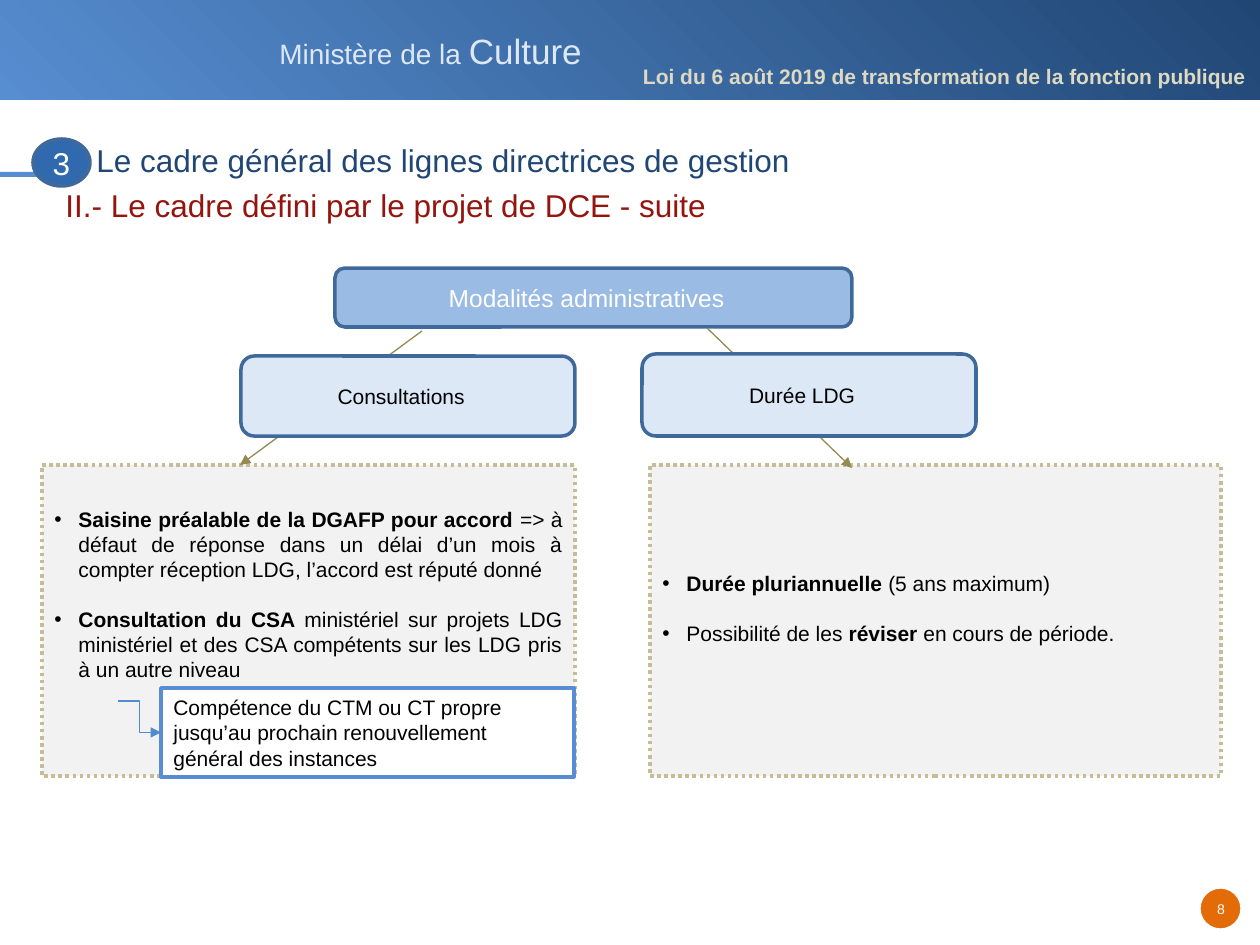
from lxml import etree
from pptx import Presentation
from pptx import util as u
from pptx.dml.color import RGBColor
from pptx.enum import dml, shapes, text
from pptx.oxml.ns import qn

PX = 914400 / 126
WHITE = RGBColor(0xFF, 0xFF, 0xFF)
BLACK = RGBColor(0, 0, 0)
NAVY = RGBColor(0x20, 0x46, 0x74)
SKY = RGBColor(0x57, 0x8E, 0xD1)
PALE = RGBColor(0xDD, 0xE8, 0xF6)
SOFT = RGBColor(0x9A, 0xBB, 0xE3)
EDGE = RGBColor(0x40, 0x69, 0x9B)
BLUE = RGBColor(0x30, 0x69, 0xAE)
LINK = RGBColor(0x52, 0x8B, 0xCF)
RED = RGBColor(0x93, 0x15, 0x0D)
SAND = RGBColor(0xDD, 0xD9, 0xC3)
DOTS = RGBColor(0xC4, 0xBD, 0x97)
OLIVE = RGBColor(0x94, 0x8A, 0x54)
GREY = RGBColor(0xF2, 0xF2, 0xF2)
ORANGE = RGBColor(0xE3, 0x6C, 0x09)

KIND = shapes.MSO_SHAPE
LINE = shapes.MSO_CONNECTOR
ALIGN = text.PP_ALIGN

deck = Presentation()
deck.slide_width, deck.slide_height = u.Inches(10), u.Inches(7.5)
slide = deck.slides.add_slide(deck.slide_layouts[6])


def put(kind, place, fill=None, edge=None, width=2):
    """Add a shape, or a text box when kind is None, at a place in px."""
    place = [round(n * PX) for n in place]
    if kind is None:
        return slide.shapes.add_textbox(*place)
    shape = slide.shapes.add_shape(kind, *place)
    shape.shadow.inherit = False
    if fill is not None:
        shape.fill.solid()
        shape.fill.fore_color.rgb = fill
    if edge is None:
        shape.line.fill.background()
    else:
        shape.line.color.rgb = edge
        shape.line.width = u.Pt(width)
    shape.text_frame.vertical_anchor = text.MSO_ANCHOR.MIDDLE
    return shape


def write(para, runs, color, align=ALIGN.LEFT):
    """Add runs given as (words, size, bold)."""
    para.alignment = align
    for words, size, bold in runs:
        run = para.add_run()
        run.text = words
        run.font.name = "Arial"
        run.font.size = u.Pt(size)
        run.font.bold = bold
        run.font.color.rgb = color


# Header band and page number
band = put(KIND.RECTANGLE, (0, 0, 1260, 100))
band.fill.gradient()
band.fill.gradient_angle = 225
for stop, color in zip(band.fill.gradient_stops, (NAVY, SKY)):
    stop.color.rgb = color
put(KIND.RECTANGLE, (0, 172, 86, 5), SKY)
put(KIND.OVAL, (1200, 888, 41, 41), ORANGE, WHITE, 0.75)

# Plain text: place, inset in px, wrap, alignment, colour, runs
labels = [
    ((267, 23, 331, 55), None, False, ALIGN.LEFT, PALE,
     [("Ministère de la ", 16, False), ("Culture", 20, False)]),
    ((1202, 895, 38, 29), 6, False, ALIGN.CENTER, WHITE, [("8", 8, False)]),
    ((643, 67, 611, 21), 0, False, ALIGN.LEFT, SAND,
     [("Loi du 6 août 2019 de transformation de la fonction publique", 12, True)]),
    ((53, 180, 992, 50), None, True, ALIGN.LEFT, RED,
     [("II.- Le cadre défini par le projet de DCE - suite", 18, False)]),
    ((84, 135, 959, 50), None, True, ALIGN.LEFT, NAVY,
     [("Le cadre général des lignes directrices de gestion", 18, False)]),
]
for place, inset, wrap, align, color, runs in labels:
    frame = put(None, place).text_frame
    frame.word_wrap = wrap
    if inset is not None:
        frame.margin_left = frame.margin_right = round(inset * PX)
        frame.margin_top = frame.margin_bottom = round(inset * PX)
    write(frame.paragraphs[0], runs, color, align)
    if inset == 0:
        frame.paragraphs[0].line_spacing = 0.85

# Dotted panels: place, bottom inset in px, bullet items
panels = [
    ((650, 465, 571, 311), 31, [
        [("Durée pluriannuelle ", 12, True), ("(5 ans maximum)", 12, False)],
        [("Possibilité de les ", 12, False), ("réviser ", 12, True),
         ("en cours de période.", 12, False)],
    ]),
    ((42, 465, 533, 311), 59, [
        [("Saisine préalable de la DGAFP pour accord ", 12, True),
         ("=> à défaut de réponse dans un délai d’un mois à compter réception LDG, "
          "l’accord est réputé donné", 12, False)],
        [("Consultation du CSA ", 12, True),
         ("ministériel sur projets LDG ministériel et des CSA compétents sur les LDG "
          "pris à un autre niveau", 12, False)],
    ]),
]
for place, inset, items in panels:
    panel = put(KIND.RECTANGLE, place, GREY, DOTS)
    panel.line.dash_style = dml.MSO_LINE.ROUND_DOT
    frame = panel.text_frame
    frame.word_wrap = True
    frame.margin_bottom = round(inset * PX)
    for i, runs in enumerate(items):
        para = frame.add_paragraph() if i else frame.paragraphs[0]
        if i:
            para.space_before = u.Pt(14)
        props = para._p.get_or_add_pPr()
        props.set("marL", str(round(24 * PX)))
        props.set("indent", str(round(-24 * PX)))
        etree.SubElement(props, qn("a:buFont")).set("typeface", "Arial")
        etree.SubElement(props, qn("a:buChar")).set("char", "•")
        write(para, runs, BLACK, ALIGN.JUSTIFY)

# Tree: each box covers the arrow drawn just before it
tree = [
    (None, (335, 268, 517, 59), SOFT, "Modalités administratives", 14, WHITE),
    ((422, 331, 240, 465), (241, 356, 334, 80), PALE, "Consultations", 12, BLACK),
    ((707, 328, 852, 468), (642, 354, 334, 82), PALE, "Durée LDG", 12, BLACK),
]
arrows = []
for ends, place, fill, words, size, color in tree:
    if ends:
        arrow = slide.shapes.add_connector(LINE.STRAIGHT, *[round(n * PX) for n in ends])
        arrow.line.color.rgb = OLIVE
        arrows.append(arrow)
    box = put(KIND.ROUNDED_RECTANGLE, place, fill, EDGE)
    box.text_frame.margin_right = round(26 * PX)
    write(box.text_frame.paragraphs[0], [(words, size, False)], color, ALIGN.CENTER)

# Callout with its elbow arrow
note = put(KIND.RECTANGLE, (161, 688, 413, 89), WHITE, SKY)
note.text_frame.word_wrap = True
write(note.text_frame.paragraphs[0],
      [("Compétence du CTM ou CT propre jusqu’au prochain renouvellement "
        "général des instances", 12, False)], BLACK)
elbow = slide.shapes.add_connector(
    LINE.ELBOW, *[round(n * PX) for n in (118, 701, 161, 732)])
elbow.end_connect(note, 1)
elbow.line.color.rgb = LINK
arrows.append(elbow)

for arrow in arrows:
    arrow.line.width = u.Pt(0.75)
    etree.SubElement(arrow.line._get_or_add_ln(), qn("a:tailEnd")).set("type", "triangle")
    etree.SubElement(arrow._element.spPr, qn("a:effectLst"))

# Section number
badge = put(KIND.OVAL, (33, 139, 57, 47), BLUE, EDGE)
badge.text_frame.word_wrap = False
write(badge.text_frame.paragraphs[0], [("3", 18, False)], WHITE, ALIGN.CENTER)

deck.save("out.pptx")
